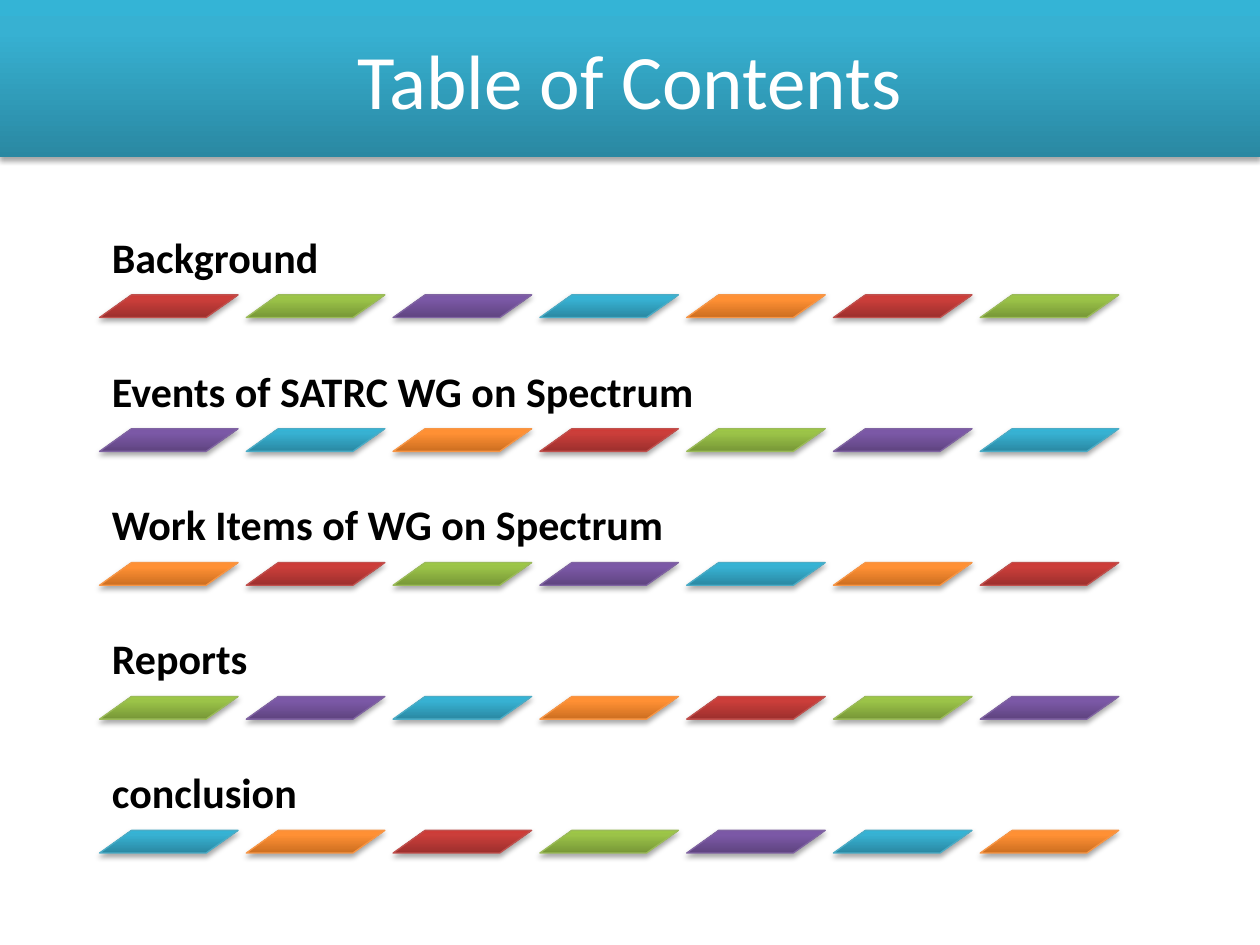
from lxml.etree import fromstring
from pptx import Presentation
from pptx.dml.color import RGBColor
from pptx.enum.shapes import MSO_SHAPE
from pptx.enum.text import MSO_ANCHOR, PP_ALIGN
from pptx.util import Inches, Pt

NS = 'xmlns:a="http://schemas.openxmlformats.org/drawingml/2006/main"'
INK = {"white": "FFFFFF", "black": "000000"}
# Each hue: gradient from bottom to top, then outline
HUES = {
    "red": ("9C2F2D", "CB3E3A", "CE3B37", "C0504D"),
    "green": ("779737", "9BC348", "9DC746", "9BBB59"),
    "purple": ("5F4480", "7B58A6", "7C57A8", "8064A2"),
    "teal": ("2A88A2", "37B1D2", "34B4D6", "4BACC6"),
    "orange": ("CC6E20", "FF9034", "FF9136", "F79646"),
}
ORDER = list(HUES)
TOPICS = ["Background", "Events of SATRC WG on Spectrum",
          "Work Items of WG on Spectrum", "Reports", "conclusion"]
LEFT, TOP = 0.79, 1.59
COLS, COL, ROW = 7, 1.165, 1.0625
TEXT_W, TEXT_H = 8.25, 0.75
BAR_W, BAR_H = 1.1, 0.18


def paint(shape, hue):
    """Give the shape a vertical gradient and a soft shadow below."""
    stops = "".join(
        f'<a:gs pos="{pos}000"><a:srgbClr val="{tone}"/></a:gs>'
        for pos, tone in zip((0, 80, 100), HUES[hue]))
    shape._element.spPr.append(fromstring(
        f'<a:gradFill {NS} rotWithShape="1"><a:gsLst>{stops}</a:gsLst>'
        '<a:lin ang="16200000" scaled="0"/></a:gradFill>'))
    shape._element.spPr.append(fromstring(
        f'<a:effectLst {NS}><a:outerShdw blurRad="{Pt(3.1)}" '
        f'dist="{Pt(1.8)}" dir="5400000" rotWithShape="0">'
        f'<a:srgbClr val="{INK["black"]}"><a:alpha val="35000"/></a:srgbClr>'
        '</a:outerShdw></a:effectLst>'))


def write(shape, text, ink, frame, para, font):
    """Put one line of text in the shape, styled by three dicts."""
    box = shape.text_frame
    line = box.paragraphs[0]
    run = line.add_run()
    run.text = text
    for part, style in ((box, frame), (line, para), (run.font, font)):
        for key, value in style.items():
            setattr(part, key, value)
    run.font.name = "Calibri"
    run.font.color.rgb = RGBColor.from_string(INK[ink])


deck = Presentation()
deck.slide_width, deck.slide_height = Inches(10), Inches(7.5)
slide = deck.slides.add_slide(deck.slide_layouts[6])
shapes = slide.shapes

banner = shapes.add_shape(MSO_SHAPE.RECTANGLE, 0, 0,
                          deck.slide_width, deck.slide_height // 6)
paint(banner, "teal")
banner.line.fill.background()
write(banner, "Table of Contents", "white",
      {"word_wrap": True, "vertical_anchor": MSO_ANCHOR.MIDDLE},
      {"alignment": PP_ALIGN.CENTER}, {"size": Pt(44)})

pad = {f"margin_{side}": Inches(0.1)
       for side in ("left", "top", "right", "bottom")}
for row, topic in enumerate(TOPICS):
    top = TOP + row * ROW
    label = shapes.add_textbox(Inches(LEFT), Inches(top),
                               Inches(TEXT_W), Inches(TEXT_H))
    write(label, topic, "black",
          {"word_wrap": True, "vertical_anchor": MSO_ANCHOR.BOTTOM, **pad},
          {"line_spacing": 0.9, "space_after": Pt(8.4)},
          {"size": Pt(24), "bold": True})
    for col in range(COLS):
        hue = ORDER[(row * COLS + col) % len(ORDER)]
        bar = shapes.add_shape(
            MSO_SHAPE.PARALLELOGRAM, Inches(LEFT + col * COL),
            Inches(top + TEXT_H), Inches(BAR_W), Inches(BAR_H))
        bar.adjustments[0] = 1.41
        paint(bar, hue)
        bar.line.color.rgb = RGBColor.from_string(HUES[hue][3])
        bar.line.width = Pt(0.75)

deck.save("out.pptx")
